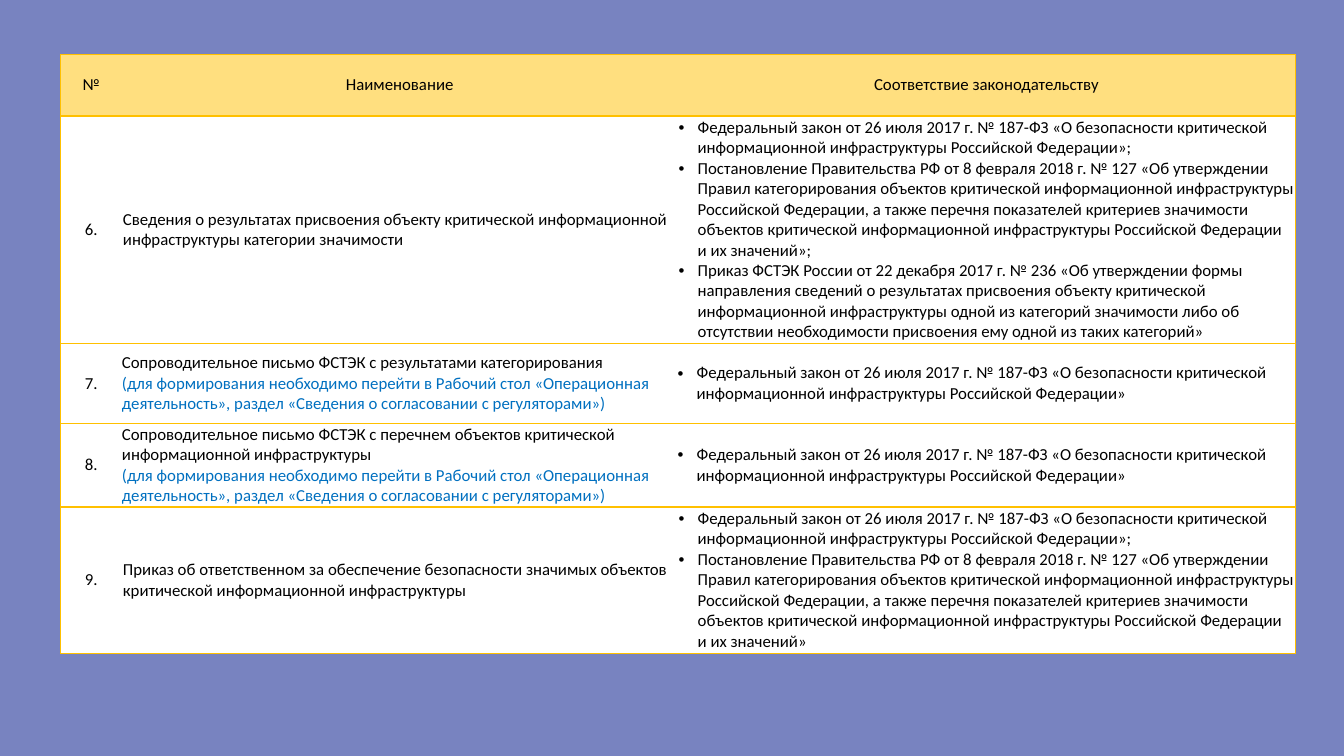
from dataclasses import dataclass

from lxml import etree
from pptx import Presentation
from pptx import util as u
from pptx.dml.color import RGBColor
from pptx.enum import text
from pptx.oxml import ns

COLORS = {
    "background": "7883C0",
    "header": "FFDF7F",
    "body": "FFFFFF",
    "border": "FFC000",
    "text": "000000",
    "hint": "0070C0",
}
COLUMN_WIDTHS = (0.61, 5.51, 6.13)
HEADINGS = ("№", "Наименование", "Соответствие законодательству")
HEADER_HEIGHT = 0.61
BULLET_INDENT = u.Inches(0.19)

LAW_187 = (
    "Федеральный закон от 26 июля 2017 г. № 187-ФЗ «О безопасности критической "
    "информационной инфраструктуры Российской Федерации»"
)
DECREE_127 = (
    "Постановление Правительства РФ от 8 февраля 2018 г. № 127 «Об утверждении Правил "
    "категорирования объектов критической информационной инфраструктуры Российской Федерации, "
    "а также перечня показателей критериев значимости объектов критической информационной "
    "инфраструктуры Российской Федерации и их значений»"
)
ORDER_236 = (
    "Приказ ФСТЭК России от 22 декабря 2017 г. № 236 «Об утверждении формы направления сведений "
    "о результатах присвоения объекту критической информационной инфраструктуры одной из "
    "категорий значимости либо об отсутствии необходимости присвоения ему одной из таких категорий»"
)
HINT = (
    "(для формирования необходимо перейти в Рабочий стол «Операционная деятельность», "
    "раздел «Сведения о согласовании с регуляторами»)"
)


@dataclass(frozen=True)
class Line:
    wording: str
    color: str = "text"
    centered: bool = False
    bulleted: bool = False


@dataclass(frozen=True)
class Document:
    number: int
    title: str
    laws: tuple[str, ...]
    height: float
    margin: float = 0
    hint: str = ""


DOCUMENTS = (
    Document(6, "Сведения о результатах присвоения объекту критической информационной "
             "инфраструктуры категории значимости",
             (LAW_187, DECREE_127, ORDER_236), 2.26, margin=0.01),
    Document(7, "Сопроводительное письмо ФСТЭК с результатами категорирования",
             (LAW_187,), 0.79, hint=HINT),
    Document(8, "Сопроводительное письмо ФСТЭК с перечнем объектов критической "
             "информационной инфраструктуры",
             (LAW_187,), 0.83, hint=HINT),
    Document(9, "Приказ об ответственном за обеспечение безопасности значимых объектов "
             "критической информационной инфраструктуры",
             (LAW_187, DECREE_127), 1.45, margin=0.01),
)


def rgb(name: str) -> RGBColor:
    return RGBColor.from_string(COLORS[name])


def add_borders(cell, yellow_sides: str) -> None:
    """Draw the given sides (letters of LRTB) in yellow and clear the others."""
    properties = cell._tc.get_or_add_tcPr()
    for side in "LRTB":
        edge = etree.SubElement(properties, ns.qn(f"a:ln{side}"), w=str(u.Pt(1)))
        if side in yellow_sides:
            fill = etree.SubElement(edge, ns.qn("a:solidFill"))
            etree.SubElement(fill, ns.qn("a:srgbClr"), val=COLORS["border"])
        else:
            etree.SubElement(edge, ns.qn("a:noFill"))


def add_bullet(paragraph) -> None:
    properties = paragraph._p.get_or_add_pPr()
    properties.set("marL", str(BULLET_INDENT))
    properties.set("indent", str(-BULLET_INDENT))
    etree.SubElement(properties, ns.qn("a:buFont"), typeface="Arial")
    etree.SubElement(properties, ns.qn("a:buChar"), char="•")


def write_line(paragraph, line: Line) -> None:
    paragraph.alignment = text.PP_ALIGN.CENTER if line.centered else text.PP_ALIGN.LEFT
    if line.bulleted:
        add_bullet(paragraph)
    run = paragraph.add_run()
    run.text = line.wording
    for attribute, value in {"name": "Calibri", "size": u.Pt(12), "bold": False}.items():
        setattr(run.font, attribute, value)
    run.font.color.rgb = rgb(line.color)


def fill_cell(cell, lines: list[Line], background: str, sides: str, margin: float = 0) -> None:
    add_borders(cell, sides)
    cell.fill.solid()
    cell.fill.fore_color.rgb = rgb(background)
    cell.vertical_anchor = text.MSO_ANCHOR.MIDDLE
    for side in ("left", "right", "top", "bottom"):
        setattr(cell, f"margin_{side}", u.Inches(margin))
    for index, line in enumerate(lines):
        paragraphs = cell.text_frame
        write_line(paragraphs.add_paragraph() if index else paragraphs.paragraphs[0], line)


def document_cells(document: Document) -> list[list[Line]]:
    title = [Line(document.title)]
    if document.hint:
        title.append(Line(document.hint, color="hint"))
    last = len(document.laws) - 1
    laws = [Line(law + (";" if index < last else ""), bulleted=True)
            for index, law in enumerate(document.laws)]
    return [[Line(f"{document.number}.", centered=True)], title, laws]


def add_documents_table(slide) -> None:
    heights = [HEADER_HEIGHT] + [document.height for document in DOCUMENTS]
    documents = slide.shapes.add_table(
        len(heights), len(COLUMN_WIDTHS), u.Inches(0.6), u.Inches(0.54),
        u.Inches(sum(COLUMN_WIDTHS)), u.Inches(sum(heights))).table
    documents.first_row = documents.horz_banding = False
    for column, width in zip(documents.columns, COLUMN_WIDTHS):
        column.width = u.Inches(width)
    for row, height in zip(documents.rows, heights):
        row.height = u.Inches(height)

    column_sides = ("LTB", "TB", "RTB")
    for column, (heading, sides) in enumerate(zip(HEADINGS, column_sides)):
        fill_cell(documents.cell(0, column), [Line(heading, centered=True)], "header", sides)
    for row, document in enumerate(DOCUMENTS, start=1):
        for column, (lines, sides) in enumerate(zip(document_cells(document), column_sides)):
            margin = document.margin if column else 0
            fill_cell(documents.cell(row, column), lines, "body", sides, margin)


def main() -> None:
    presentation = Presentation()
    presentation.slide_width = u.Inches(13.33)
    presentation.slide_height = u.Inches(7.5)
    slide = presentation.slides.add_slide(presentation.slide_layouts[6])
    slide.background.fill.solid()
    slide.background.fill.fore_color.rgb = rgb("background")
    add_documents_table(slide)
    presentation.save("out.pptx")


if __name__ == "__main__":
    main()
